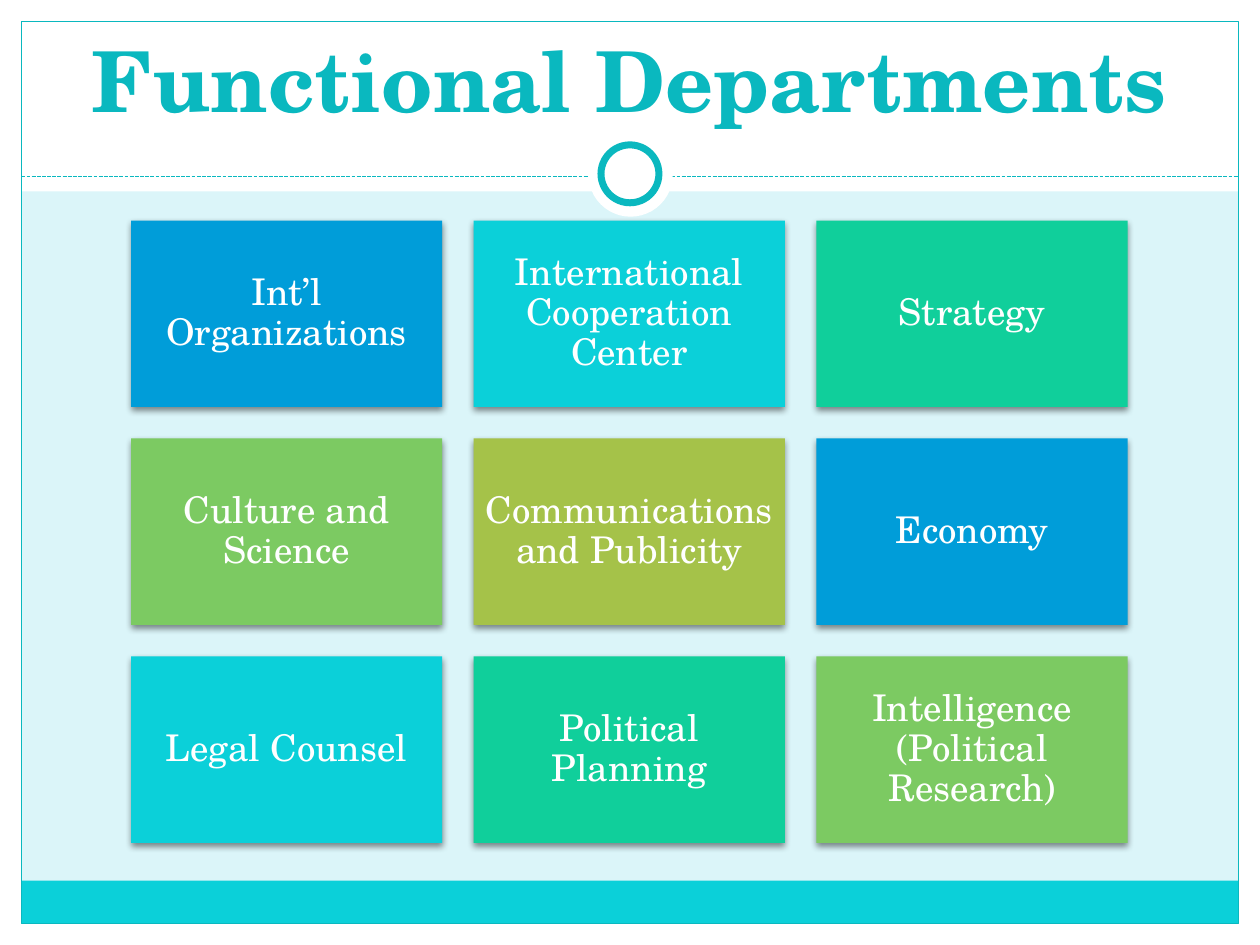
from itertools import cycle

from lxml.etree import SubElement
from pptx import Presentation
from pptx.dml.color import RGBColor
from pptx.enum.dml import MSO_LINE_DASH_STYLE as DASH
from pptx.enum.shapes import MSO_CONNECTOR, MSO_SHAPE as SHAPE
from pptx.enum.text import MSO_ANCHOR as ANCHOR, MSO_AUTO_SIZE as AUTO_SIZE, PP_ALIGN as ALIGN
from pptx.oxml.ns import qn
from pptx.util import Inches, Pt

FONT = "TeX Gyre Schola"
WHITE = RGBColor(0xFF, 0xFF, 0xFF)
PALE = RGBColor(0xDB, 0xF5, 0xF9)
TEAL = RGBColor(0x0A, 0xB8, 0xBF)
BLUE = RGBColor(0x00, 0x9D, 0xD9)
CYAN = RGBColor(0x0B, 0xD0, 0xD9)
MINT = RGBColor(0x10, 0xCF, 0x9B)
GREEN = RGBColor(0x7C, 0xCA, 0x62)
OLIVE = RGBColor(0xA5, 0xC2, 0x49)

DEPARTMENTS = [
    "Int’l Organizations", "International Cooperation Center", "Strategy",
    "Culture and Science", "Communications and Publicity", "Economy",
    "Legal Counsel", "Political Planning", "Intelligence (Political Research)",
]
COLUMNS = 3
GRID_LEFT, GRID_TOP = 1.04, 1.75
TILE_WIDTH, TILE_HEIGHT = 2.47, 1.48
COLUMN_STEP, ROW_STEP = 2.72, 1.73


def add_panel(slide, kind, box, fill=None, line=None, line_width=0.75):
    """Add a flat shape with an optional fill and outline."""
    panel = slide.shapes.add_shape(kind, *map(Inches, box))
    panel.shadow.inherit = False
    if fill is None:
        panel.fill.background()
    else:
        panel.fill.solid()
        panel.fill.fore_color.rgb = fill
    if line is None:
        panel.line.fill.background()
    else:
        panel.line.color.rgb = line
        panel.line.width = Pt(line_width)
    return panel


def add_divider(slide, left, right, y):
    """Add the dashed rule below the title."""
    divider = slide.shapes.add_connector(
        MSO_CONNECTOR.STRAIGHT, Inches(left), Inches(y), Inches(right), Inches(y))
    divider.line.color.rgb = TEAL
    divider.line.width = Pt(0.75)
    divider.line.dash_style = DASH.SQUARE_DOT
    SubElement(divider._element.spPr, qn("a:effectLst"))


def add_frame(slide):
    """Add the white margins, footer band, border and ring."""
    for margin in [(0, 7.33, 10, 0.17), (0, 0, 10, 1.52),
                   (0, 0, 0.17, 7.5), (9.83, 0, 0.17, 7.5)]:
        add_panel(slide, SHAPE.RECTANGLE, margin, WHITE)
    add_panel(slide, SHAPE.RECTANGLE, (0.17, 6.99, 9.66, 0.34), CYAN)
    add_panel(slide, SHAPE.RECTANGLE, (0.17, 0.17, 9.66, 7.16), line=TEAL)
    add_divider(slide, 0.17, 9.83, 1.4)
    add_panel(slide, SHAPE.OVAL, (4.67, 1.05, 0.67, 0.67), WHITE)
    add_panel(slide, SHAPE.OVAL, (4.77, 1.15, 0.46, 0.46), WHITE, TEAL, 4)


def write(frame, text, size, color, bold=False):
    """Write one centred run into a text frame."""
    frame.word_wrap = True
    paragraph = frame.paragraphs[0]
    paragraph.alignment = ALIGN.CENTER
    run = paragraph.add_run()
    run.text = text
    run.font.name = FONT
    run.font.size = Pt(size)
    run.font.bold = bold
    run.font.color.rgb = color
    return paragraph


def set_title(slide, text):
    """Place and format the title in front of the frame."""
    title = slide.shapes.title
    slide.shapes._spTree.append(title._element)
    title.left, title.top, title.width, title.height = map(Inches, (0.33, 0.25, 9.33, 0.83))
    title.text_frame.auto_size = AUTO_SIZE.NONE
    title.text_frame.vertical_anchor = ANCHOR.BOTTOM
    write(title.text_frame, text, 48, TEAL, bold=True)


def add_soft_shadow(tile):
    """Give a tile a soft shadow straight below it."""
    effects = tile._element.spPr.find(qn("a:effectLst"))
    shadow = SubElement(effects, qn("a:outerShdw"), blurRad=str(Pt(4)),
                        dist=str(Pt(2)), dir="5400000", rotWithShape="0")
    black = SubElement(shadow, qn("a:srgbClr"), val="000000")
    SubElement(black, qn("a:alpha"), val="45000")


def add_tile(slide, left, top, department, color):
    """Add one department tile."""
    tile = add_panel(slide, SHAPE.RECTANGLE, (left, top, TILE_WIDTH, TILE_HEIGHT), color)
    add_soft_shadow(tile)
    frame = tile.text_frame
    frame.margin_left = frame.margin_right = Inches(0.08)
    frame.margin_top = frame.margin_bottom = Inches(0.08)
    frame.vertical_anchor = ANCHOR.MIDDLE
    write(frame, department, 21, WHITE).line_spacing = 0.9


def main():
    """Build the departments slide."""
    deck = Presentation()
    deck.slide_width, deck.slide_height = Inches(10), Inches(7.5)
    slide = deck.slides.add_slide(deck.slide_layouts[5])
    slide.background.fill.solid()
    slide.background.fill.fore_color.rgb = PALE
    add_frame(slide)
    set_title(slide, "Functional Departments")
    colors = cycle([BLUE, CYAN, MINT, GREEN, OLIVE])
    for index, (department, color) in enumerate(zip(DEPARTMENTS, colors)):
        row, column = divmod(index, COLUMNS)
        add_tile(slide, GRID_LEFT + column * COLUMN_STEP, GRID_TOP + row * ROW_STEP,
                 department, color)
    deck.save("out.pptx")


if __name__ == "__main__":
    main()
